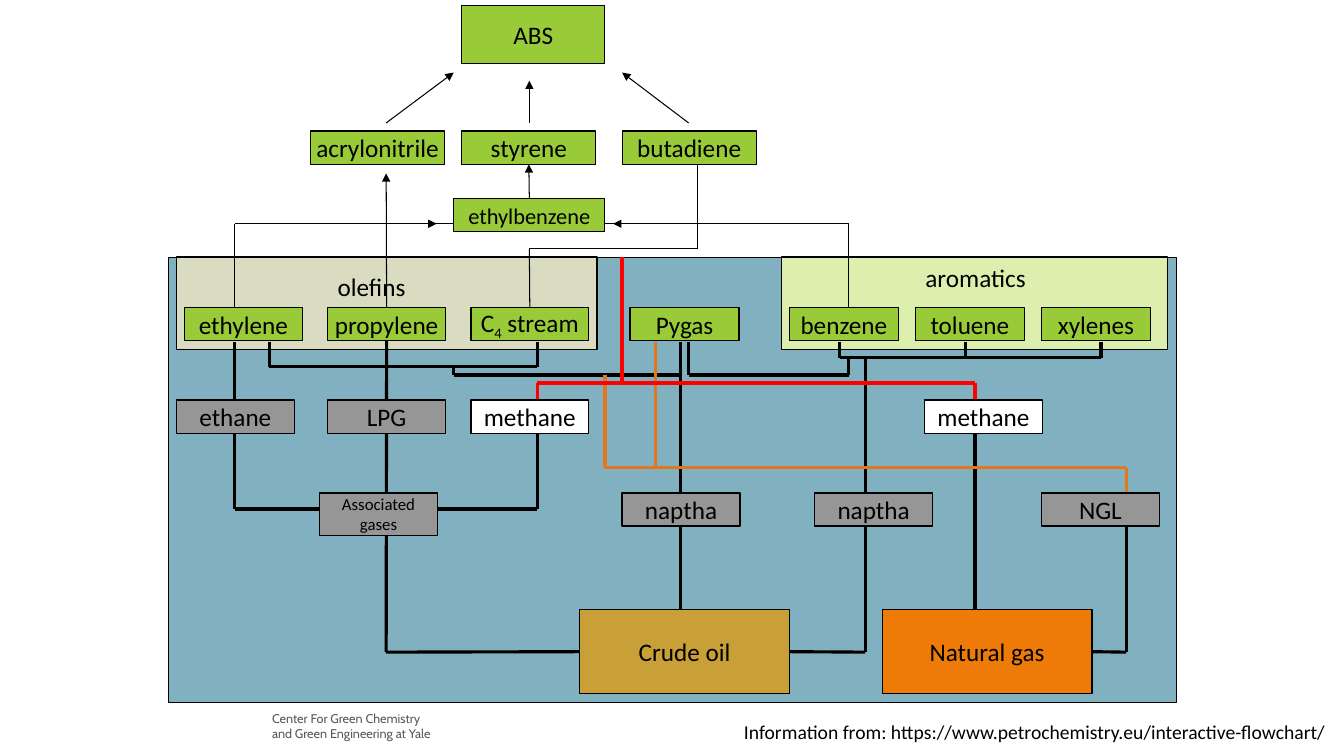
from itertools import pairwise

from lxml import etree
from pptx import Presentation
from pptx.dml.color import RGBColor
from pptx.enum.shapes import MSO_CONNECTOR, MSO_SHAPE
from pptx.enum.text import MSO_ANCHOR, PP_ALIGN
from pptx.oxml.ns import qn
from pptx.util import Inches, Pt

RECTANGLE = MSO_SHAPE.RECTANGLE
STRAIGHT = MSO_CONNECTOR.STRAIGHT
MIDDLE = MSO_ANCHOR.MIDDLE
CENTER = PP_ALIGN.CENTER

BLACK = RGBColor(0x00, 0x00, 0x00)
WHITE = RGBColor(0xFF, 0xFF, 0xFF)
GREEN = RGBColor(0x99, 0xCB, 0x38)
GRAY = RGBColor(0x96, 0x96, 0x96)
GOLD = RGBColor(0xC9, 0x9F, 0x37)
ORANGE = RGBColor(0xEE, 0x7B, 0x08)
BLUE = RGBColor(0x81, 0xB0, 0xC1)
BEIGE = RGBColor(0xDA, 0xDC, 0xC2)
LIME = RGBColor(0xDD, 0xEF, 0xAF)
NGL_ORANGE = RGBColor(0xE2, 0x77, 0x1E)
METHANE_RED = RGBColor(0xFF, 0x00, 0x00)
FOOTER_GRAY = RGBColor(0x59, 0x59, 0x59)

THIN, OUTLINE, PIPE = 0.75, 1, 2.25  # line widths in points

# Background areas: left, top, width, height, fill, line width
AREAS = [
    (1.67, 2.55, 10, 4.42, BLUE, THIN),
    (7.75, 2.55, 3.83, 0.92, LIME, OUTLINE),
    (1.75, 2.55, 4.17, 0.92, BEIGE, OUTLINE),
]

# Free text: text, left, top, width, height, size, font, colour, wrap
LABELS = [
    ("olefins", 3.25, 2.64, 0.88, 0.4, 18, "Calibri", BLACK, False),
    ("aromatics", 9.08, 2.55, 1.21, 0.4, 18, "Calibri", BLACK, False),
    ("Information from: https://www.petrochemistry.eu/interactive-flowchart/",
     7.28, 7.09, 6.03, 0.34, 14, "Calibri", BLACK, False),
    ("Center For Green Chemistry\nand Green Engineering at Yale",
     2.6, 7, 1.86, 0.4, 9, "Cabin", FOOTER_GRAY, True),
]

# Rows of substances: top, width, height, line width, size, [(text, left, fill)]
ROWS = [
    (0.05, 1.42, 0.58, THIN, 18, [("ABS", 4.58, GREEN)]),
    (1.3, 1.33, 0.33, THIN, 18, [
        ("acrylonitrile", 3.08, GREEN), ("styrene", 4.58, GREEN),
        ("butadiene", 6.17, GREEN)]),
    (1.97, 1.5, 0.33, THIN, 16, [("ethylbenzene", 4.5, GREEN)]),
    (3.05, 1.17, 0.33, OUTLINE, 18, [
        ("ethylene", 1.83, GREEN), ("propylene", 3.25, GREEN),
        ("C4 stream", 4.67, GREEN)]),
    (3.05, 1.08, 0.33, OUTLINE, 18, [
        ("Pygas", 6.25, GREEN), ("benzene", 7.83, GREEN),
        ("toluene", 9.08, GREEN), ("xylenes", 10.33, GREEN)]),
    (3.97, 1.17, 0.33, OUTLINE, 18, [
        ("ethane", 1.75, GRAY), ("LPG", 3.25, GRAY),
        ("methane", 4.67, WHITE), ("methane", 9.17, WHITE)]),
    (4.89, 1.17, 0.42, OUTLINE, 12, [("Associated\ngases", 3.17, GRAY)]),
    (4.89, 1.17, 0.33, OUTLINE, 18, [
        ("naptha", 6.17, GRAY), ("naptha", 8.08, GRAY), ("NGL", 10.33, GRAY)]),
    (6.05, 2.08, 0.83, OUTLINE, 18, [
        ("Crude oil", 5.75, GOLD), ("Natural gas", 8.75, ORANGE)]),
]

# Routes by style: colour, width, arrowhead at the end, [corner points]
ROUTES = [
    (BLACK, PIPE, False, [
        [(2.33, 3.39), (2.33, 5.05), (5.33, 5.05), (5.33, 4.05)],
        [(2.67, 3.39), (2.67, 3.64), (5.33, 3.64), (5.33, 3.39)],
        [(4.5, 3.64), (4.5, 3.72), (6.75, 3.72)],
        [(3.83, 3.39), (3.83, 6.47), (5.75, 6.47)],
        [(6.75, 3.39), (6.75, 6.05)],
        [(6.83, 3.39), (6.83, 3.72), (8.42, 3.72), (8.42, 3.55)],
        [(8.33, 3.39), (8.33, 3.55), (10.92, 3.55), (10.92, 3.39)],
        [(9.58, 3.55), (9.58, 3.39)],
        [(8.58, 3.55), (8.58, 6.47), (7.83, 6.47)],
        [(9.67, 4.3), (9.67, 6.05)],
        [(10.83, 6.47), (11.17, 6.47), (11.17, 5.22)],
    ]),
    (NGL_ORANGE, PIPE, False, [
        [(11.17, 4.89), (11.17, 4.64), (6, 4.64), (6, 3.72)],
        [(6.5, 4.64), (6.5, 3.39)],
    ]),
    (METHANE_RED, PIPE, False, [
        [(5.33, 3.97), (5.33, 3.8), (9.67, 3.8), (9.67, 3.97)],
        [(6.17, 3.8), (6.17, 2.55)],
    ]),
    (BLACK, THIN, False, [
        [(2.33, 3.05), (2.33, 2.22), (8.42, 2.22), (8.42, 3.05)],
        [(5.25, 3.05), (5.25, 2.47), (6.92, 2.47), (6.92, 1.64)],
    ]),
    (BLACK, THIN, True, [
        [(3.33, 2.22), (4.33, 2.22)],
        [(7.08, 2.22), (6.08, 2.22)],
        [(5.25, 1.97), (5.25, 1.64)],
        [(3.83, 3.05), (3.83, 1.72)],
        [(3.83, 1.22), (4.5, 0.72)],
        [(5.25, 1.22), (5.25, 0.8)],
        [(6.83, 1.22), (6.17, 0.72)],
    ]),
]

prs = Presentation()
prs.slide_width, prs.slide_height = Inches(13.33), Inches(7.5)
shapes = prs.slides.add_slide(prs.slide_layouts[6]).shapes


def add_box(left, top, width, height, fill, line_width):
    box = shapes.add_shape(RECTANGLE, *map(Inches, (left, top, width, height)))
    box.shadow.inherit = False
    box.fill.solid()
    box.fill.fore_color.rgb = fill
    box.line.color.rgb = BLACK
    box.line.width = Pt(line_width)
    return box


def format_text(frame, size, font="Calibri", color=BLACK):
    for paragraph in frame.paragraphs:
        for run in paragraph.runs:
            run.font.size = Pt(size)
            run.font.name = font
            run.font.color.rgb = color


def find_site(x, y):
    """Return the substance and side whose midpoint lies at (x, y), if any."""
    for box in substances:
        mid_x, mid_y = box.left + box.width // 2, box.top + box.height // 2
        sides = [(mid_x, box.top), (box.left, mid_y),
                 (mid_x, box.top + box.height), (box.left + box.width, mid_y)]
        for side, (side_x, side_y) in enumerate(sides):
            if max(abs(side_x - Inches(x)), abs(side_y - Inches(y))) < Inches(0.02):
                return box, side
    return None


def add_line(start, end, color, width, arrow):
    line = shapes.add_connector(STRAIGHT, *map(Inches, start + end))
    line.line.color.rgb = color
    line.line.width = Pt(width)
    if arrow:
        etree.SubElement(line.line._get_or_add_ln(), qn("a:tailEnd"), type="triangle")
    etree.SubElement(line._element.spPr, qn("a:effectLst"))
    for point, connect in ((start, line.begin_connect), (end, line.end_connect)):
        site = find_site(*point)
        if site:
            connect(*site)


# Background areas
for area in AREAS:
    add_box(*area)

# Free text
for text, left, top, width, height, size, font, color, wrap in LABELS:
    label = shapes.add_textbox(*map(Inches, (left, top, width, height)))
    label.text_frame.word_wrap = wrap
    label.text_frame.text = text
    format_text(label.text_frame, size, font, color)

# Substances
substances = []
for top, width, height, line_width, size, row in ROWS:
    for text, left, fill in row:
        substance = add_box(left, top, width, height, fill, line_width)
        frame = substance.text_frame
        frame.word_wrap = False
        frame.vertical_anchor = MIDDLE
        if text == "C4 stream":
            for part in ("C", "4", " stream"):
                frame.paragraphs[0].add_run().text = part
            frame.paragraphs[0].runs[1].font._element.set("baseline", "-25000")
        else:
            frame.text = text
        for paragraph in frame.paragraphs:
            paragraph.alignment = CENTER
        format_text(frame, size)
        substances.append(substance)

# Routes between substances
for color, width, arrow, routes in ROUTES:
    for route in routes:
        for start, end in pairwise(route):
            add_line(start, end, color, width, arrow)

# Substances stand in front of the routes that pass behind them
for substance in substances:
    shapes._spTree.append(substance._element)

prs.save("out.pptx")
